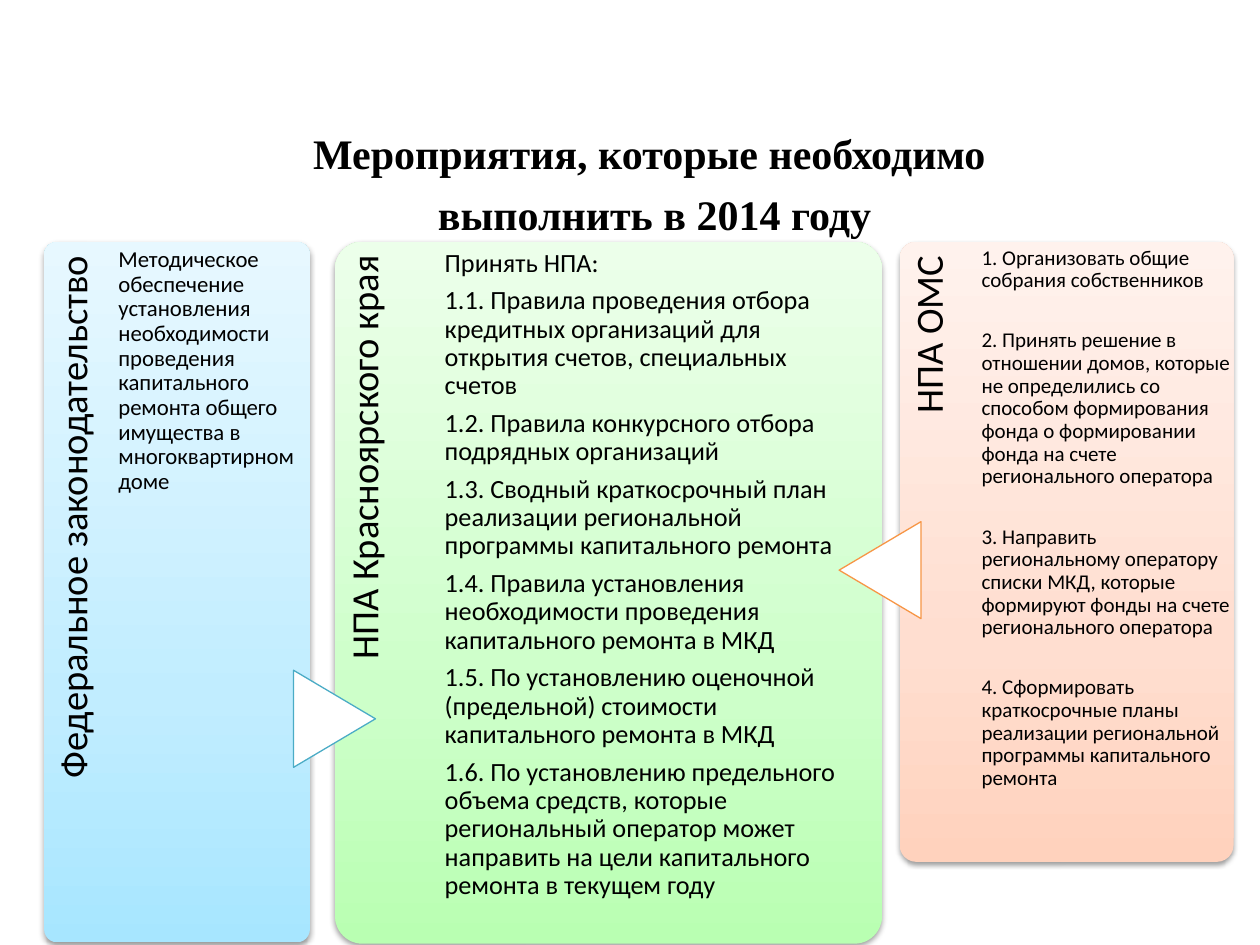
from dataclasses import dataclass
from typing import Any

from lxml.etree import SubElement
from pptx import Presentation
from pptx.dml.color import RGBColor
from pptx.enum.shapes import MSO_SHAPE
from pptx.enum.text import MSO_ANCHOR, PP_ALIGN
from pptx.oxml.ns import qn
from pptx.util import Pt


@dataclass(frozen=True)
class Theme:
    text: RGBColor = RGBColor(0, 0, 0)
    white: RGBColor = RGBColor(255, 255, 255)
    title_font: str = "Times New Roman"
    body_font: str = "Calibri"
    title_size: float = 24
    label_size: float = 22
    blue: tuple = ("A7E6FF", "C1EDFF", "E7F8FF")
    green: tuple = ("B9FFB2", "CDFFC9", "ECFFEA")
    peach: tuple = ("FFD2BD", "FFDED0", "FFF2ED")
    blue_line: RGBColor = RGBColor.from_string("4BACC6")
    orange_line: RGBColor = RGBColor.from_string("F79646")


@dataclass(frozen=True)
class Panel:
    left: float
    width: float
    height: float
    colors: tuple
    label: str
    body_left: float
    body_width: float
    body_inset: float
    size: float
    gap: float
    lines: tuple


@dataclass(frozen=True)
class Arrow:
    center_x: float
    center_y: float
    rotation: float
    line: RGBColor


THEME = Theme()
PANEL_TOP = 138.24
ARROW_WIDTH, ARROW_HEIGHT = 55.44, 46.8

TITLE = ("Мероприятия, которые необходимо ", "выполнить в 2014 году")

PANELS = (
    Panel(25.2, 151.92, 400.32, THEME.blue, "Федеральное законодательство",
          67.68, 113.04, 3.6, 13, 4.55, (
              "Методическое обеспечение установления необходимости проведения "
              "капитального ремонта общего имущества в многоквартирном доме",
          )),
    Panel(191.52, 312.48, 401.04, THEME.green, "НПА Красноярского края",
          254.16, 233.28, 4.32, 15, 5.25, (
              "Принять НПА:",
              "1.1. Правила проведения отбора кредитных организаций для открытия "
              "счетов, специальных счетов",
              "1.2. Правила конкурсного отбора подрядных организаций",
              "1.3. Сводный краткосрочный план реализации региональной программы "
              "капитального ремонта",
              "1.4. Правила установления необходимости проведения капитального "
              "ремонта в МКД",
              "1.5. По установлению оценочной (предельной) стоимости капитального "
              "ремонта в МКД",
              "1.6. По установлению предельного объема средств, которые "
              "региональный оператор может направить на цели капитального ремонта "
              "в текущем году",
          )),
    Panel(514.08, 190.8, 354.24, THEME.peach, "НПА ОМС",
          560.88, 142.56, 2.88, 12, 21.4, (
              "1. Организовать общие собрания собственников",
              "2. Принять решение в отношении домов, которые не определились со "
              "способом формирования фонда о формировании фонда на счете "
              "регионального оператора",
              "3. Направить региональному оператору списки МКД, которые формируют "
              "фонды на счете регионального оператора",
              "4. Сформировать краткосрочные планы реализации региональной "
              "программы капитального ремонта",
          )),
)

ARROWS = (
    Arrow(191.16, 410.76, 90, THEME.blue_line),
    Arrow(502.92, 325.8, 270, THEME.orange_line),
)


def apply(target: Any, values: dict) -> None:
    for name, value in values.items():
        setattr(target, name, value)


def add_text(page, frame: tuple, insets: tuple, lines: tuple, font: dict,
             layout: dict, gap: float = 0, rotation: float = 0):
    """Add a text box; gap is the space between its paragraphs."""
    box = page.shapes.add_textbox(*(Pt(value) for value in frame))
    box.rotation = rotation
    left, top, right, bottom = (Pt(value) for value in insets)
    apply(box.text_frame, {
        "word_wrap": True, "vertical_anchor": MSO_ANCHOR.TOP,
        "margin_left": left, "margin_top": top,
        "margin_right": right, "margin_bottom": bottom,
    })
    for index, line in enumerate(lines):
        para = box.text_frame.add_paragraph() if index else box.text_frame.paragraphs[0]
        apply(para, layout)
        if index:
            para.space_before = Pt(gap)
        span = para.add_run()
        span.text = line
        apply(span.font, font)
        span.font.color.rgb = THEME.text
    return box


def add_color(parent, color: str):
    return SubElement(parent, qn("a:srgbClr"), val=color)


def add_card(page, panel: Panel) -> None:
    card = page.shapes.add_shape(
        MSO_SHAPE.ROUNDED_RECTANGLE, Pt(panel.left), Pt(PANEL_TOP),
        Pt(panel.width), Pt(panel.height))
    card.adjustments[0] = 0.05
    card.line.fill.background()
    card.shadow.inherit = False

    # Three-stop gradient, running upwards
    card.fill.gradient()
    gradient = card._element.spPr.find(qn("a:gradFill"))
    for child in list(gradient):
        gradient.remove(child)
    stops = SubElement(gradient, qn("a:gsLst"))
    for position, color in zip((0, 35, 100), panel.colors):
        add_color(SubElement(stops, qn("a:gs"), pos=str(position * 1000)), color)
    SubElement(gradient, qn("a:lin"), ang=str(270 * 60000), scaled="1")

    # Soft shadow below the card
    effects = card._element.spPr.find(qn("a:effectLst"))
    shadow = SubElement(effects, qn("a:outerShdw"), blurRad=str(Pt(3.1)),
                        dist=str(Pt(1.6)), dir=str(90 * 60000), rotWithShape="0")
    SubElement(add_color(shadow, "000000"), qn("a:alpha"), val="38000")


def add_panel(page, panel: Panel) -> None:
    add_card(page, panel)

    # Vertical label: the strip is a fifth of the card wide
    length, strip = panel.height * 0.82, panel.width * 0.2
    frame = (panel.left + (strip - length) / 2,
             PANEL_TOP + (length - strip) / 2, length, strip)
    add_text(page, frame, (0, 5.76, 7.92, 0), (panel.label,),
             {"name": THEME.body_font, "size": Pt(THEME.label_size)},
             {"alignment": PP_ALIGN.RIGHT, "line_spacing": 0.9}, rotation=270)

    # List of measures
    add_text(page, (panel.body_left, PANEL_TOP, panel.body_width, panel.height),
             (0, panel.body_inset, 0, 0), panel.lines,
             {"name": THEME.body_font, "size": Pt(panel.size)},
             {"alignment": PP_ALIGN.LEFT, "line_spacing": 0.9}, panel.gap)


def add_arrow(page, arrow: Arrow) -> None:
    shape = page.shapes.add_shape(
        MSO_SHAPE.FLOWCHART_EXTRACT, Pt(arrow.center_x - ARROW_WIDTH / 2),
        Pt(arrow.center_y - ARROW_HEIGHT / 2), Pt(ARROW_WIDTH), Pt(ARROW_HEIGHT))
    shape.rotation = arrow.rotation
    shape.shadow.inherit = False
    shape.fill.solid()
    shape.fill.fore_color.rgb = THEME.white
    shape.line.color.rgb = arrow.line
    shape.line.width = Pt(0.75)


def main() -> None:
    deck = Presentation()
    apply(deck, {"slide_width": Pt(720), "slide_height": Pt(540)})
    page = deck.slides.add_slide(deck.slide_layouts[6])

    # Title, shifted right by its left inset
    add_text(page, (36, 66.24, 648, 72), (35.2, 6.6, 7.2, 3.6), TITLE,
             {"name": THEME.title_font, "size": Pt(THEME.title_size), "bold": True},
             {"alignment": PP_ALIGN.CENTER}, gap=6)

    # Panels and the arrows between them
    for panel in PANELS:
        add_panel(page, panel)
    for arrow in ARROWS:
        add_arrow(page, arrow)

    deck.save("out.pptx")


if __name__ == "__main__":
    main()
